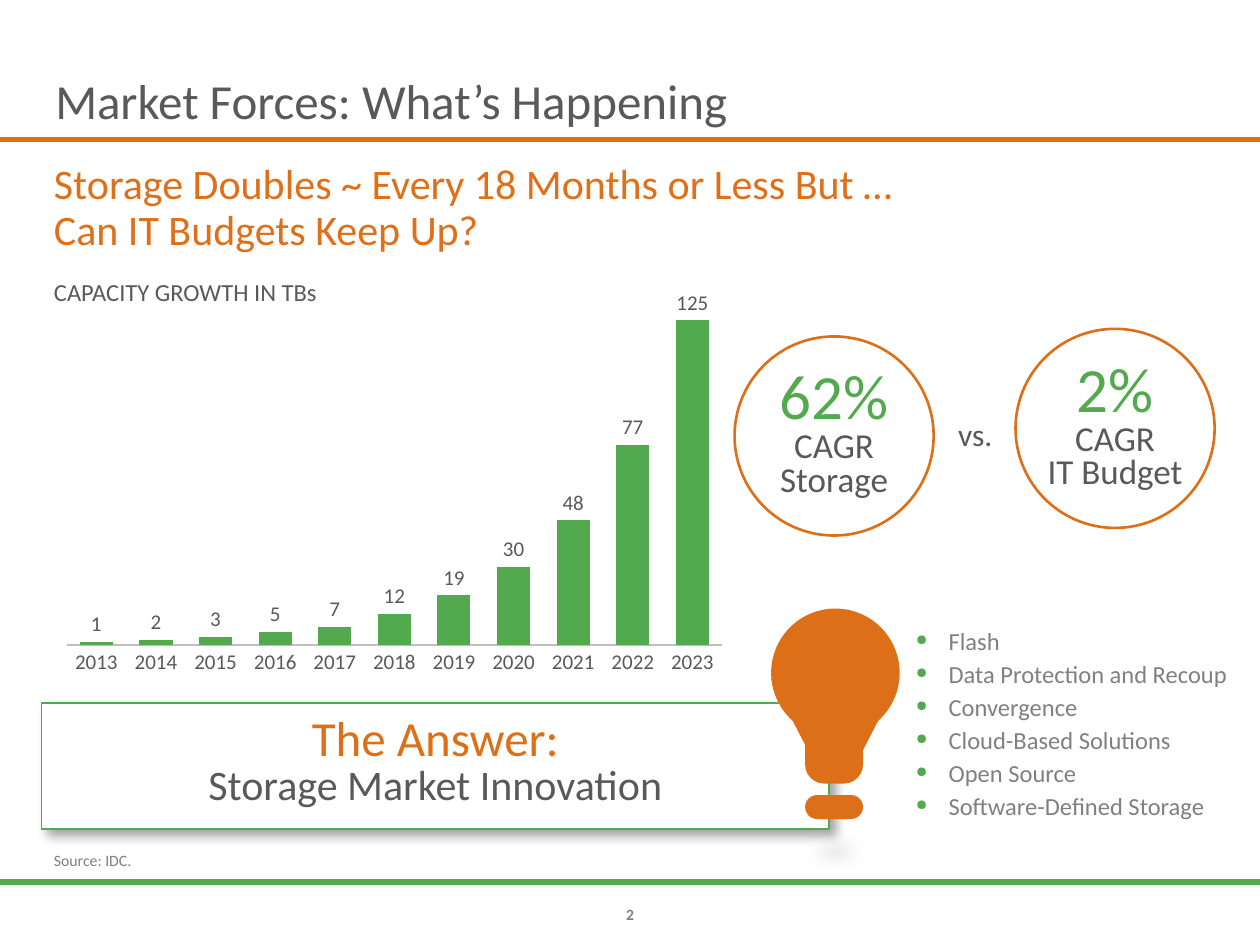
from lxml.etree import SubElement
from pptx import Presentation
from pptx.chart.data import CategoryChartData
from pptx.dml.color import RGBColor
from pptx.enum.chart import XL_CHART_TYPE, XL_LABEL_POSITION, XL_TICK_MARK
from pptx.enum.shapes import MSO_CONNECTOR, MSO_SHAPE
from pptx.enum.text import MSO_ANCHOR, PP_ALIGN
from pptx.oxml.ns import qn
from pptx.util import Inches, Pt

GREEN = RGBColor(0x53, 0xA9, 0x4D)
ORANGE = RGBColor(0xDD, 0x6F, 0x19)
AMBER = RGBColor(0xE0, 0x6F, 0x19)
DARK = RGBColor(0x59, 0x59, 0x59)
GRAY = RGBColor(0x80, 0x80, 0x80)
SILVER = RGBColor(0xBF, 0xBF, 0xBF)
SMOKE = RGBColor(0xC8, 0xC8, 0xC8)
WHITE = RGBColor(0xFF, 0xFF, 0xFF)


def tag(parent, name, **attrs):
    return SubElement(parent, qn(name), {key: str(val) for key, val in attrs.items()})


def add_bullet(par):
    props = par._p.get_or_add_pPr()
    props.set("marL", str(Inches(0.26)))
    props.set("indent", str(-Inches(0.26)))
    tag(tag(props, "a:buClr"), "a:srgbClr", val=GREEN)
    tag(props, "a:buSzPct", val=60000)
    tag(props, "a:buChar", char="●")


def write(frame, pars, font="Calibri", align=PP_ALIGN.LEFT, anchor=MSO_ANCHOR.TOP,
          space=1.0, after=0, bold=False, bullet=False, wrap=True,
          inset=(0.1, 0.05, 0.1, 0.05)):
    frame.word_wrap = wrap
    frame.vertical_anchor = anchor
    frame.margin_left, frame.margin_top, frame.margin_right, frame.margin_bottom = map(Inches, inset)
    for index, runs in enumerate(pars):
        par = frame.paragraphs[0] if index == 0 else frame.add_paragraph()
        if bullet:
            add_bullet(par)
        par.alignment = align
        par.line_spacing = space
        par.space_after = Pt(after)
        for text, size, color in runs:
            for part, line in enumerate(text.split("\n")):
                if part:
                    par.add_line_break()
                if line:
                    run = par.add_run()
                    run.text = line
                    run.font.name = font
                    run.font.size = Pt(size)
                    run.font.bold = bold
                    run.font.color.rgb = color


class Deck:
    def __init__(self, font):
        self.font = font
        self.file = Presentation()
        self.file.slide_width = Inches(10)
        self.file.slide_height = Inches(7.5)
        self.slide = self.file.slides.add_slide(self.file.slide_layouts[6])

    def text(self, box, pars, **fmt):
        shape = self.slide.shapes.add_textbox(*map(Inches, box))
        write(shape.text_frame, pars, font=self.font, **fmt)

    def shape(self, kind, box, fill, line=None, width=1, adjust=None):
        shape = self.slide.shapes.add_shape(kind, *map(Inches, box))
        shape.shadow.inherit = False
        shape.fill.solid()
        shape.fill.fore_color.rgb = fill
        if line is None:
            shape.line.fill.background()
        else:
            shape.line.color.rgb = line
            shape.line.width = Pt(width)
        if adjust is not None:
            shape.adjustments[0] = adjust
        return shape

    def effect(self, shape, name, **attrs):
        return tag(shape._element.spPr.find(qn("a:effectLst")), name, **attrs)

    def rule(self, top, color):
        line = self.slide.shapes.add_connector(
            MSO_CONNECTOR.STRAIGHT, 0, Inches(top), Inches(10), Inches(top))
        line.line.color.rgb = color
        line.line.width = Pt(3)
        tag(line._element.spPr, "a:effectLst")

    def badge(self, left, top, rate, name):
        self.shape(MSO_SHAPE.OVAL, (left, top, 1.58, 1.58), WHITE, ORANGE, 1.5)
        self.text((left + 0.15, top + 0.22, 1.28, 1.13),
                  [[(rate, 36, GREEN)], [("CAGR", 20, DARK)], [(name, 20, DARK)]],
                  align=PP_ALIGN.CENTER, anchor=MSO_ANCHOR.MIDDLE, space=0.8, wrap=False)

    def chart(self, box, cats, vals):
        data = CategoryChartData()
        data.categories = cats
        data.add_series("Series 1", vals)
        chart = self.slide.shapes.add_chart(
            XL_CHART_TYPE.COLUMN_CLUSTERED, *map(Inches, box), data).chart
        chart.has_legend = False
        chart.has_title = False
        chart.font.name = self.font
        chart.font.size = Pt(12)
        chart.font.color.rgb = DARK
        axis = chart.value_axis
        axis.visible = False
        axis.has_major_gridlines = False
        axis.minimum_scale, axis.maximum_scale = 0, 140
        base = chart.category_axis
        base.major_tick_mark = XL_TICK_MARK.NONE
        base.format.line.color.rgb = SILVER
        base.format.line.width = Pt(1)
        plot = chart.plots[0]
        plot.gap_width = 80
        plot.vary_by_categories = False
        bars = plot.series[0].format.fill
        bars.solid()
        bars.fore_color.rgb = GREEN
        plot.has_data_labels = True
        labels = plot.data_labels
        labels.show_value = True
        labels.position = XL_LABEL_POSITION.OUTSIDE_END
        labels.font.size = Pt(12)
        labels.font.color.rgb = DARK

    def answer(self, box, pars):
        shape = self.shape(MSO_SHAPE.RECTANGLE, box, WHITE, GREEN)
        shade = self.effect(shape, "a:outerShdw", blurRad=Pt(6), dist=Pt(4),
                            dir=45 * 60000, algn="tl", rotWithShape=0)
        tag(tag(shade, "a:srgbClr", val="000000"), "a:alpha", val=35000)
        write(shape.text_frame, pars, font=self.font, align=PP_ALIGN.CENTER,
              anchor=MSO_ANCHOR.MIDDLE, space=0.85, inset=(0.1, 0.05, 0.1, 0.1))

    def bulb(self, left, top):
        self.shape(MSO_SHAPE.OVAL, (left, top, 1.02, 1.02), ORANGE)
        neck = self.shape(MSO_SHAPE.TRAPEZOID, (left, top + 0.56, 1.02, 0.65), ORANGE, adjust=0.517)
        neck.rotation = 180
        self.shape(MSO_SHAPE.ROUNDED_RECTANGLE, (left + 0.27, top + 0.93, 0.46, 0.46),
                   ORANGE, adjust=0.333)
        glow = self.shape(MSO_SHAPE.OVAL, (left, top + 1.75, 1.02, 0.35), SMOKE)
        self.effect(glow, "a:softEdge", rad=Pt(10))
        self.shape(MSO_SHAPE.ROUNDED_RECTANGLE, (left + 0.27, top + 1.48, 0.46, 0.19),
                   ORANGE, adjust=0.5)


def main():
    deck = Deck("Calibri")
    deck.text((4.79, 7.18, 0.42, 0.15), [[("2", 9, GRAY)]], bold=True,
              align=PP_ALIGN.CENTER, anchor=MSO_ANCHOR.BOTTOM, inset=(0, 0, 0, 0))
    deck.rule(7, GREEN)
    deck.rule(1.11, ORANGE)
    deck.text((0.34, 0.58, 9.32, 0.5), [[("Market Forces: What’s Happening", 28, DARK)]],
              anchor=MSO_ANCHOR.BOTTOM, space=0.9)
    deck.text((0.33, 1.25, 9.33, 0.83),
              [[("Storage Doubles ~ Every 18 Months or Less But …\nCan IT Budgets Keep Up?", 24, AMBER)]],
              space=0.9)
    deck.text((0.33, 6.7, 9.33, 0.25), [[("Source: IDC.", 9, GRAY)]], anchor=MSO_ANCHOR.BOTTOM)
    deck.badge(8.06, 2.61, "2%", "IT Budget")
    deck.badge(5.83, 2.67, "62%", "Storage")
    deck.text((7.5, 3.3, 0.48, 0.35), [[("vs.", 18, DARK)]], align=PP_ALIGN.CENTER,
              anchor=MSO_ANCHOR.MIDDLE, space=0.8, wrap=False)
    deck.chart((0.42, 2.17, 5.42, 3.25), [str(year) for year in range(2013, 2024)],
               (1, 2, 3, 5, 7, 12, 19, 30, 48, 77, 125))
    deck.text((0.33, 2.17, 2.92, 0.33), [[("CAPACITY GROWTH IN TBs", 14, DARK)]], space=0.95)
    deck.answer((0.33, 5.58, 6.25, 1),
                [[("The Answer:\n", 28, ORANGE), ("Storage Market Innovation", 24, DARK)]])
    deck.bulb(6.12, 4.83)
    topics = ("Flash", "Data Protection and Recoup", "Convergence",
              "Cloud-Based Solutions", "Open Source", "Software-Defined Storage")
    deck.text((7.17, 4.92, 2.75, 1.65), [[(topic, 14, GRAY)] for topic in topics],
              after=2, bullet=True)
    deck.file.save("out.pptx")


if __name__ == "__main__":
    main()
